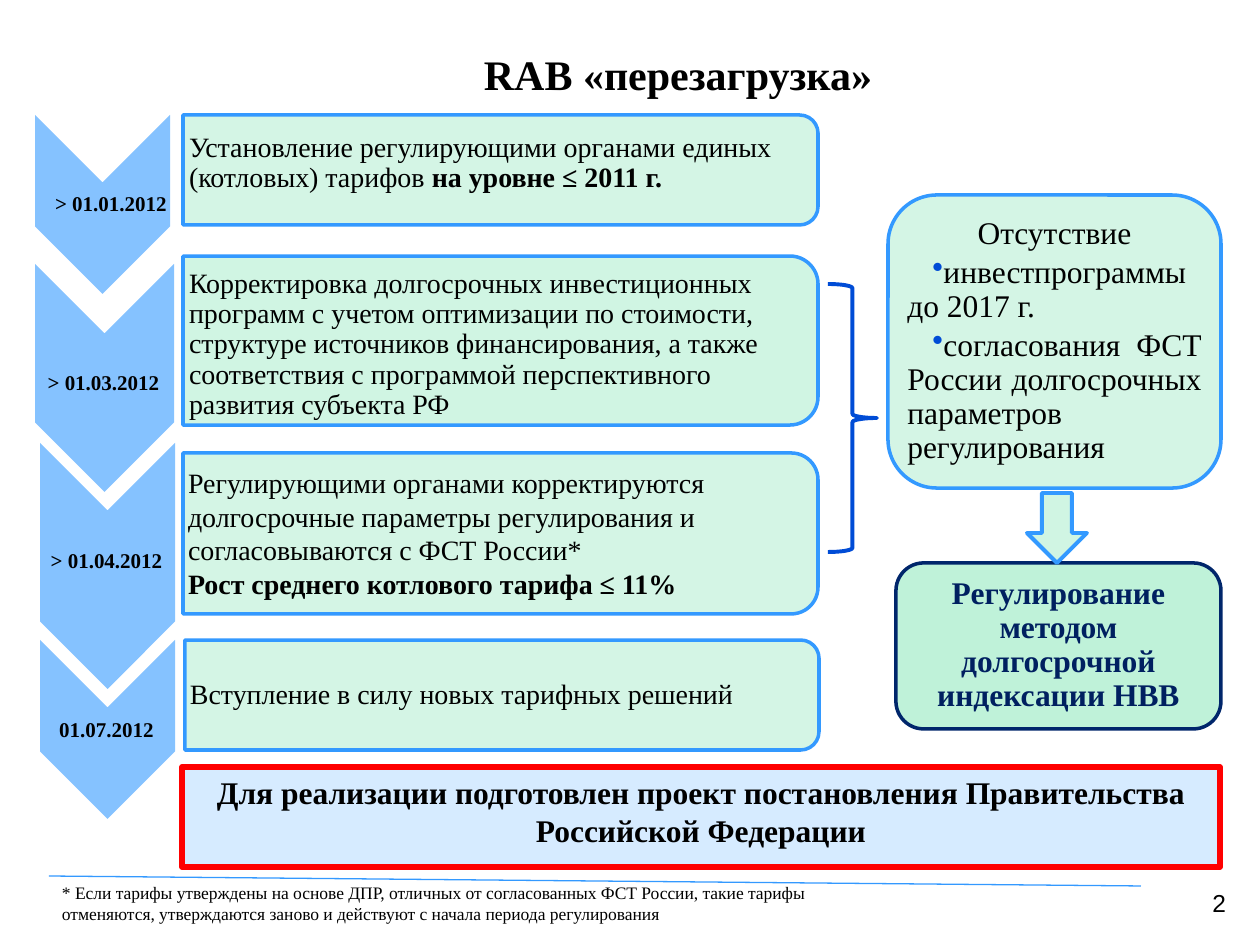
from lxml.etree import SubElement
from pptx import Presentation
from pptx.dml.color import RGBColor
from pptx.enum.shapes import MSO_CONNECTOR, MSO_SHAPE as SHAPE
from pptx.enum.text import MSO_ANCHOR as ANCHOR, PP_ALIGN as ALIGN
from pptx.oxml.ns import qn
from pptx.util import Emu, Pt

SERIF = "Times New Roman"
MINT, BLUE, ROYAL, NAVY = "D0F5E3", "3399FF", "004CD6", "00266B"
STEPS = [
    ("> 01.01.2012", (35, 115, 135, 179), (34, 178, 154, 54), (183, 115, 635, 110), 90, (13, 6, 13, 6),
     [[("Установление регулирующими органами единых (котловых) тарифов ", False),
       ("на уровне ≤ 2011 г.", True)]], 0.9, ANCHOR.TOP),
    ("> 01.03.2012", (35, 264, 139, 228), (34, 348, 139, 72), (183, 256, 635, 169), 100, (5, 6, 5, 6),
     [[("Корректировка долгосрочных инвестиционных программ с учетом оптимизации по стоимости, "
        "структуре источников финансирования, а также соответствия с программой перспективного "
        "развития субъекта РФ", False)]], 0.9, ANCHOR.TOP),
    ("> 01.04.2012", (40, 443, 135, 246), (39, 535, 135, 53), (183, 453, 635, 161), 90, (5, 5, 5, 5),
     [[("Регулирующими органами корректируются долгосрочные параметры регулирования и "
        "согласовываются с ФСТ России*", False)],
      [("Рост среднего котлового тарифа ≤ 11%", True)]], 1, ANCHOR.TOP),
    ("01.07.2012", (40, 640, 135, 179), (39, 704, 135, 54), (185, 640, 634, 110), 90, (5, 5, 5, 5),
     [[("Вступление в силу новых тарифных решений", False)]], 0.9, ANCHOR.MIDDLE),
]


def px(length):
    """Turn px into EMU."""
    return Emu(round(length * 914400 / 126))


def color(value):
    """Turn a hex string into a colour."""
    return RGBColor.from_string(value)


def add_box(page, kind, box, fill=None, line=None, width=2, alpha=100, turned=False):
    """Draw a preset shape over the box, turned by a quarter if asked."""
    left, top, wide, high = box
    if turned:
        left, top = left + (wide - high) / 2, top + (high - wide) / 2
        wide, high = high, wide
    shape = page.shapes.add_shape(kind, *map(px, (left, top, wide, high)))
    shape.shadow.inherit = False
    shape.rotation = 90 if turned else 0
    if fill:
        shape.fill.solid()
        shape.fill.fore_color.rgb = color(fill)
        if alpha < 100:
            tint = shape.fill._xPr.find(qn("a:solidFill"))[0]
            SubElement(tint, qn("a:alpha"), val=str(alpha * 1000))
    else:
        shape.fill.background()
    if line:
        shape.line.color.rgb = color(line)
        shape.line.width = Pt(width)
    else:
        shape.line.fill.background()
    return shape


def set_frame(shape, insets=(13, 6, 13, 6), anchor=ANCHOR.TOP):
    """Prepare the text frame of a shape."""
    frame = shape.text_frame
    frame.word_wrap = True
    frame.vertical_anchor = anchor
    frame.margin_left, frame.margin_top, frame.margin_right, frame.margin_bottom = map(px, insets)
    return frame


def write(frame, paragraphs, size, align=ALIGN.LEFT, bold=False, ink="000000",
          spacing=1, after=0, font=SERIF):
    """Fill a frame with paragraphs given as strings or as (text, bold) runs."""
    for index, content in enumerate(paragraphs):
        para = frame.paragraphs[0] if index == 0 else frame.add_paragraph()
        para.alignment, para.line_spacing, para.space_after = align, spacing, Pt(after)
        runs = [(content, bold)] if isinstance(content, str) else content
        para.font.name, para.font.size = font, Pt(size)
        para.font.color.rgb = color(ink)
        para.font.bold = all(strong for _, strong in runs)
        for text, strong in runs:
            span = para.add_run()
            span.text = text
            if len(runs) > 1:
                span.font.bold = strong


def add_label(page, box, text, size, insets=(13, 6, 13, 6), anchor=ANCHOR.TOP, **style):
    """Add a text box holding one paragraph."""
    label = page.shapes.add_textbox(*map(px, box))
    write(set_frame(label, insets, anchor), [text], size, **style)


def add_step(page, date, arrow, label, panel, alpha, insets, paragraphs, spacing, anchor):
    """Draw one dated chevron with its panel."""
    add_box(page, SHAPE.CHEVRON, arrow, "85C2FF", turned=True)
    add_label(page, label, date, 12, (1, 1, 1, 1), ANCHOR.MIDDLE,
              align=ALIGN.CENTER, bold=True, spacing=0.9)
    shape = add_box(page, SHAPE.ROUND_2_SAME_RECTANGLE, panel, MINT, BLUE, alpha=alpha, turned=True)
    frame = set_frame(shape, insets, anchor)
    frame._txBody.bodyPr.set("vert", "vert270")
    write(frame, paragraphs, 16, spacing=spacing, after=2.4 if spacing < 1 else 0)


def add_bullet(para):
    """Give a paragraph a coloured bullet and a first-line indent."""
    props = para._p.get_or_add_pPr()
    props.set("marL", "0")
    props.set("indent", str(px(25)))
    font = props.find(qn("a:defRPr"))
    tint = SubElement(props, qn("a:buClr"))
    SubElement(tint, qn("a:srgbClr"), val=ROYAL)
    mark = SubElement(props, qn("a:buChar"), char="•")
    font.addprevious(tint)
    font.addprevious(mark)


def add_outcome(page, left, top):
    """Draw the brace, the conditions, the arrow and the result."""
    add_box(page, SHAPE.RIGHT_BRACE, (left, top + 89, 49, 268), line=ROYAL, width=2.25)
    conditions = add_box(page, SHAPE.ROUNDED_RECTANGLE, (left + 60, top, 333, 293), MINT, BLUE, alpha=90)
    frame = set_frame(conditions, (5, 5, 5, 5), ANCHOR.MIDDLE)
    write(frame, ["Отсутствие", "инвестпрограммы до 2017 г.",
                  "согласования ФСТ России долгосрочных параметров регулирования"],
          18, ALIGN.JUSTIFY, spacing=0.9, after=2.7)
    frame.paragraphs[0].alignment = ALIGN.CENTER
    for para in frame.paragraphs[1:]:
        add_bullet(para)
    result = add_box(page, SHAPE.ROUNDED_RECTANGLE, (left + 68, top + 368, 325, 166),
                     "B9F1D5", NAVY, alpha=90)
    write(set_frame(result), ["Регулирование методом долгосрочной индексации НВВ"], 18,
          ALIGN.CENTER, True, "002060", 0.9, 2.7)
    add_box(page, SHAPE.DOWN_ARROW, (left + 199, top + 298, 60, 70), MINT, BLUE, 2.25)


def add_footer(page, left, top):
    """Draw the rule, the footnote and the page number."""
    ends = (left, top, left + 1092, top + 10)
    rule = page.shapes.add_connector(MSO_CONNECTOR.STRAIGHT, *map(px, ends))
    rule.line.color.rgb = color(BLUE)
    rule.line.width = Pt(0.75)
    SubElement(rule._element.spPr, qn("a:effectLst"))
    add_label(page, (left, top, 808, 55),
              "* Если тарифы утверждены на основе ДПР, отличных от согласованных ФСТ России, такие "
              "тарифы отменяются, утверждаются заново и действуют с начала периода регулирования", 10)
    add_label(page, (left + 928, top + 6, 262, 42), "2", 14, align=ALIGN.RIGHT, font="Arial")


def main():
    """Build the slide and save it."""
    deck = Presentation()
    deck.slide_width, deck.slide_height = px(1260), px(945)
    page = deck.slides.add_slide(deck.slide_layouts[6])
    add_label(page, (111, 42, 1134, 64), "RAB «перезагрузка»", 24, anchor=ANCHOR.MIDDLE,
              align=ALIGN.CENTER, bold=True)
    for step in STEPS:
        add_step(page, *step)
    banner = add_box(page, SHAPE.RECTANGLE, (182, 767, 1038, 100), "D6EBFF", "FF0000", 3.25)
    write(set_frame(banner), ["Для реализации подготовлен проект постановления Правительства "
                              "Российской Федерации"], 18, ALIGN.CENTER, True)
    add_outcome(page, 828, 195)
    add_footer(page, 49, 876)
    deck.save("out.pptx")


if __name__ == "__main__":
    main()
